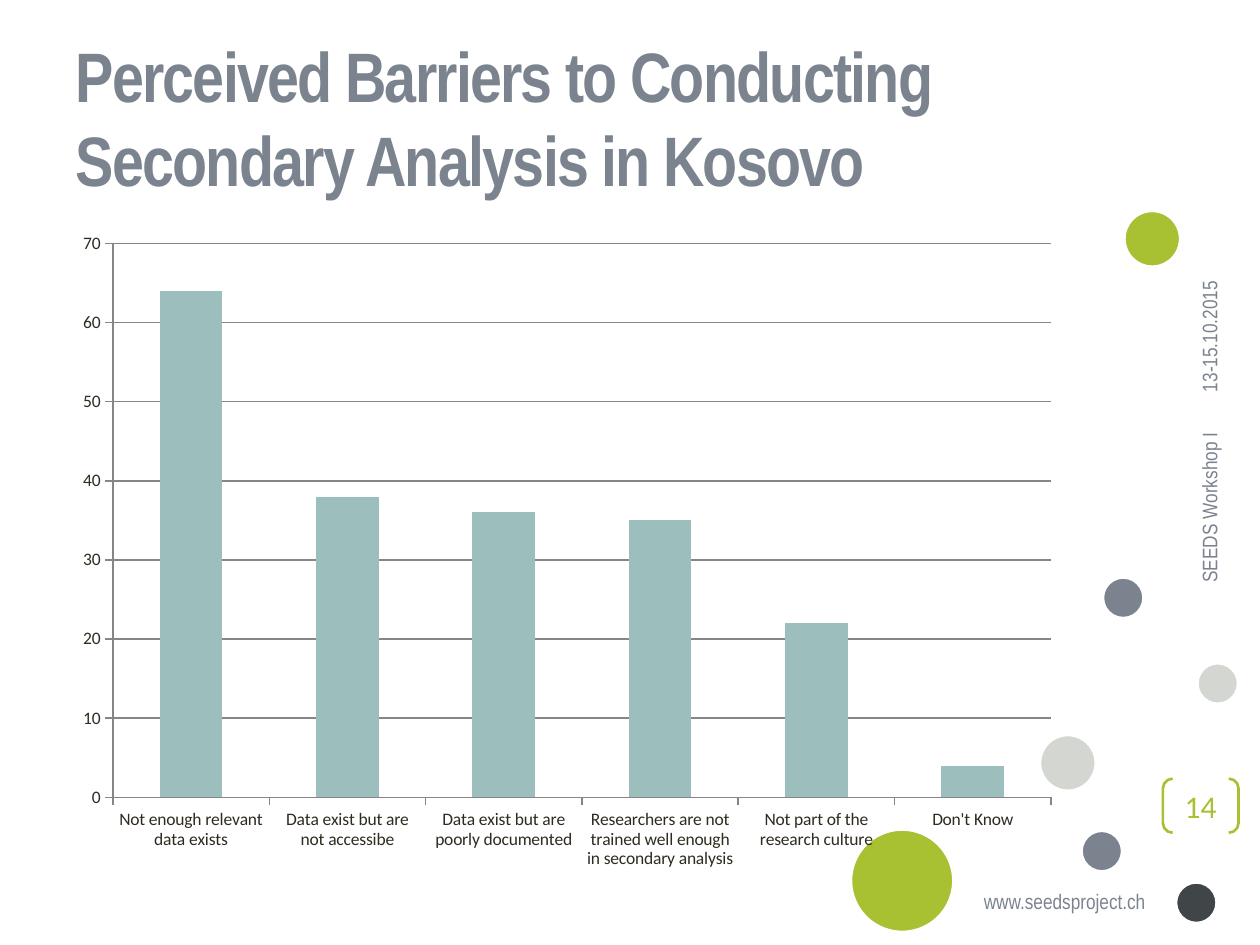
import pptx
import pptx.chart.data
import pptx.dml.color
import pptx.enum.chart
import pptx.enum.shapes
import pptx.enum.text
import pptx.util
from pptx.util import Inches

GREEN, SLATE, PALE, DARK = "A7C133", "7B838F", "D4D6D2", "404548"
AXIS = "868686"
ALIGN = pptx.enum.text.PP_ALIGN
MIDDLE = pptx.enum.text.MSO_ANCHOR.MIDDLE


def rgb(value):
    return pptx.dml.color.RGBColor.from_string(value)


def write(sp, text, size, color, font="Arial Narrow", align=ALIGN.LEFT):
    tf = sp.text_frame
    tf.text = text
    p = tf.paragraphs[0]
    p.alignment = align
    r = p.runs[0]
    r.font.size = pptx.util.Pt(size)
    r.font.name = font
    r.font.color.rgb = rgb(color)
    return r


prs = pptx.Presentation()
prs.slide_width, prs.slide_height = Inches(10), Inches(7.5)
s = prs.slides.add_slide(prs.slide_layouts[5])

# Decorative circles: left, top, diameter, colour
circles = [
    (6.75, 6.58, 0.82, GREEN),
    (8.92, 1.67, 0.45, GREEN),
    (9.33, 7, 0.33, DARK),
    (8.25, 5.83, 0.45, PALE),
    (9.5, 5.26, 0.33, PALE),
    (8.58, 6.59, 0.33, SLATE),
    (8.75, 4.58, 0.33, SLATE),
]
for x, y, d, color in circles:
    sp = s.shapes.add_shape(pptx.enum.shapes.MSO_SHAPE.OVAL,
                            Inches(x), Inches(y), Inches(d), Inches(d))
    sp.shadow.inherit = False
    sp.fill.solid()
    sp.fill.fore_color.rgb = rgb(color)
    sp.line.color.rgb = rgb("FFFFFF")
    sp.line.width = pptx.util.Pt(2)

# Title
title = s.shapes.title
title.left, title.top = Inches(0.5), Inches(0.3)
title.width, title.height = Inches(8), Inches(1.25)
r = write(title, "Perceived Barriers to Conducting Secondary Analysis in Kosovo",
          40, SLATE)
r.font.bold = True
r.font._element.set("spc", "-100")
title.text_frame.vertical_anchor = MIDDLE
title.text_frame.auto_size = pptx.enum.text.MSO_AUTO_SIZE.NONE

# Web address
sp = s.shapes.add_textbox(Inches(7.71), Inches(7), Inches(1.54), Inches(0.3))
write(sp, "www.seedsproject.ch", 12, SLATE)
sp.text_frame.word_wrap = False

# Footer and date, reading upwards
side_texts = [
    ("SEEDS Workshop I", 8.72, 4.03, 1.75, 0.36, ALIGN.RIGHT),
    ("13-15.10.2015", 8.95, 2.4, 1.29, 0.33, ALIGN.LEFT),
]
for text, x, y, w, h, align in side_texts:
    sp = s.shapes.add_textbox(Inches(x), Inches(y), Inches(w), Inches(h))
    sp.rotation = 270
    write(sp, text, 12, SLATE, align=align)
    sp.text_frame.word_wrap = True
    sp.text_frame.vertical_anchor = MIDDLE

# Slide number in brackets
sp = s.shapes.add_shape(pptx.enum.shapes.MSO_SHAPE.DOUBLE_BRACKET,
                        Inches(9.23), Inches(6.18), Inches(0.6), Inches(0.43))
sp.adjustments[0] = 0.18
sp.shadow.inherit = False
sp.fill.background()
sp.line.color.rgb = rgb(GREEN)
sp.line.width = pptx.util.Pt(1.5)
write(sp, "14", 18, GREEN, "Calibri", ALIGN.CENTER)
tf = sp.text_frame
tf.margin_left = tf.margin_right = tf.margin_top = tf.margin_bottom = 0
tf.vertical_anchor = MIDDLE

# Column chart
data = pptx.chart.data.CategoryChartData()
data.categories = [
    "Not enough relevant data exists",
    "Data exist but are not accessibe",
    "Data exist but are poorly documented",
    "Researchers are not trained well enough in secondary analysis",
    "Not part of the research culture",
    "Don't Know",
]
data.add_series("Series 1", [64, 38, 36, 35, 22, 4])
chart = s.shapes.add_chart(pptx.enum.chart.XL_CHART_TYPE.COLUMN_CLUSTERED,
                           Inches(0.5), Inches(1.75), Inches(8), Inches(5.25),
                           data).chart
chart.has_legend = False
chart.has_title = False
chart.font.size = pptx.util.Pt(10)
chart.font.name = "Calibri"
chart.font.color.rgb = rgb("2F2B20")

plot = chart.plots[0]
plot.gap_width = 150
plot.vary_by_categories = False
fill = plot.series[0].format.fill
fill.solid()
fill.fore_color.rgb = rgb("9CBEBD")

# Axes and gridlines
value_axis = chart.value_axis
value_axis.minimum_scale, value_axis.maximum_scale = 0, 70
value_axis.major_unit = 10
value_axis.has_major_gridlines = True
value_axis.tick_labels.number_format = "General"
value_axis.tick_labels.number_format_is_linked = False
for axis in (chart.category_axis, value_axis):
    axis.major_tick_mark = pptx.enum.chart.XL_TICK_MARK.OUTSIDE
for part in (chart.category_axis, value_axis, value_axis.major_gridlines):
    part.format.line.color.rgb = rgb(AXIS)
    part.format.line.width = pptx.util.Pt(0.8)

prs.save("out.pptx")
